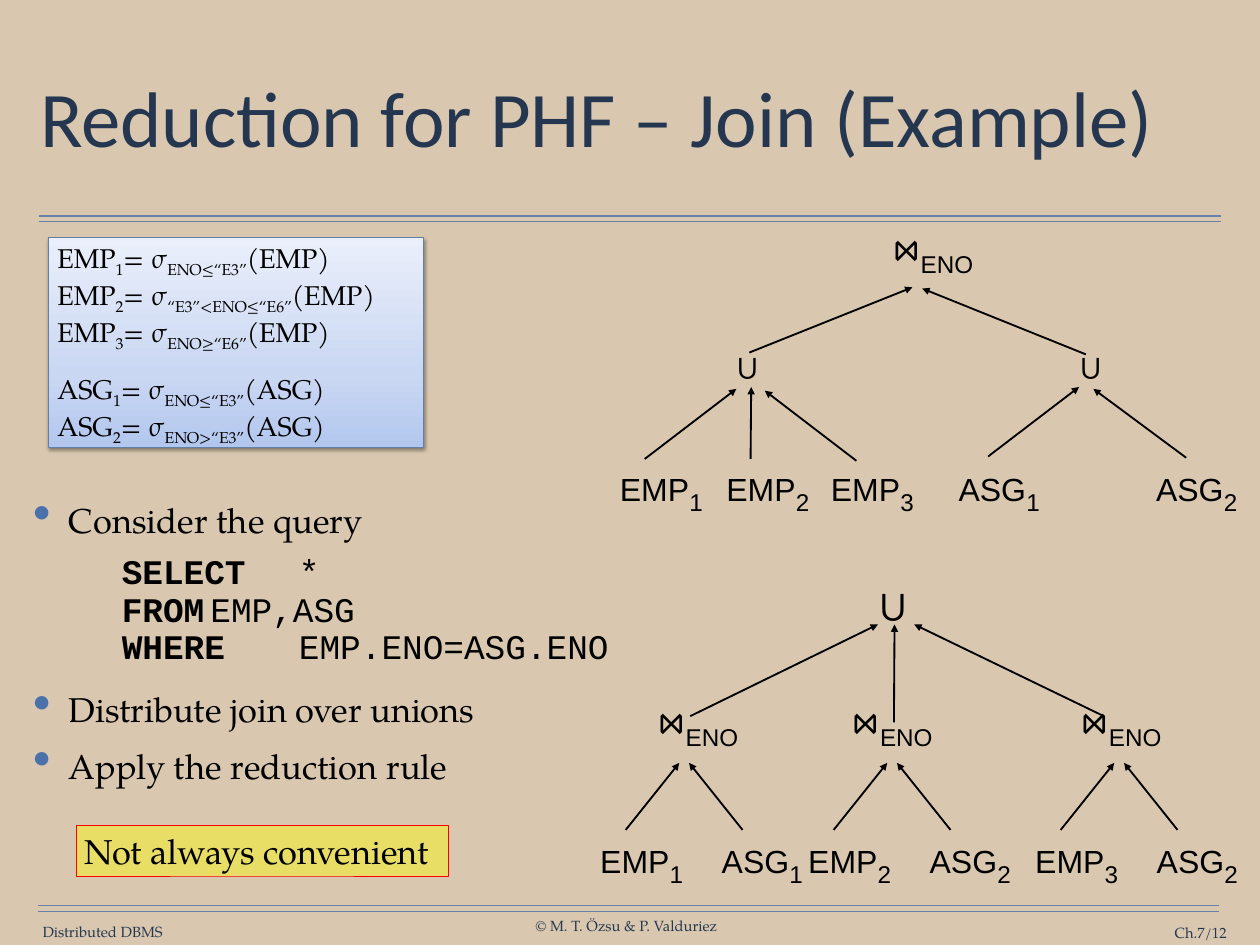
from copy import deepcopy

from lxml.etree import SubElement
from pptx import Presentation
from pptx.dml.color import RGBColor
from pptx.enum.shapes import MSO_CONNECTOR, MSO_SHAPE
from pptx.enum.text import MSO_ANCHOR, MSO_AUTO_SIZE, PP_ALIGN
from pptx.oxml.ns import qn
from pptx.util import Pt

COLORS = {
    "background": "D9C8AF", "rule": "6682AA", "footer": "263750",
    "title": "253750", "text": "000000", "bullet": "4A71A9",
    "box_line": "627FA8", "note": "FFFF00", "note_line": "FF0000",
}
BOX_GRADIENT = [(0, "B3C7EE"), (0.35, "CAD7F2"), (1, "EAEFFB")]
SERIF, SANS, MONO = "TeX Gyre Pagella", "Arial", "Courier New"


def rgb(name):
    return RGBColor.from_string(COLORS[name])


def sub_element(parent, tag, **attrs):
    return SubElement(parent, qn(tag), attrs)


def set_font(font, name, size, color="text"):
    font.name, font.size = name, Pt(size)
    font.color.rgb = rgb(color)


def add_run(p, text, sub=False, bold=None):
    r = p.add_run()
    r.text, r.font.bold = text, bold
    if sub:
        r._r.get_or_add_rPr().set("baseline", "-25000")
    return r


def set_frame(tf, margin=0, wrap=True, anchor=MSO_ANCHOR.TOP):
    tf.margin_left = tf.margin_right = tf.margin_top = tf.margin_bottom = Pt(margin)
    tf.word_wrap, tf.vertical_anchor = wrap, anchor
    tf.auto_size = MSO_AUTO_SIZE.NONE


def add_label(s, center, top, width, height, align=PP_ALIGN.CENTER, anchor=MSO_ANCHOR.TOP):
    box = s.shapes.add_textbox(Pt(center - width / 2), Pt(top), Pt(width), Pt(height))
    set_frame(box.text_frame, wrap=False, anchor=anchor)
    p = box.text_frame.paragraphs[0]
    p.alignment = align
    return p


def add_line(s, start, end, color="text", width=1.5, arrow=True):
    line = s.shapes.add_connector(MSO_CONNECTOR.STRAIGHT, *map(Pt, start + end))
    line.line.color.rgb, line.line.width = rgb(color), Pt(width)
    if arrow:
        sub_element(line.line._get_or_add_ln(), "a:tailEnd", type="triangle")
    sub_element(line._element.spPr, "a:effectLst")


def add_relation(s, name, number, center, top):
    p = add_label(s, center, top, 70, 31.5)
    set_font(p.font, SANS, 26)
    add_run(p, name)
    add_run(p, number, sub=True).font.size = Pt(34)


def add_join(s, center, top):
    p = add_label(s, center, top, 88, 34)
    p.line_spacing = Pt(31.3)
    set_font(add_run(p, "⋈").font, SERIF, 36)
    set_font(add_run(p, "ENO", sub=True).font, SANS, 34)


def add_union(s, center, top, size, spacing):
    p = add_label(s, center, top, 22, spacing)
    p.line_spacing = Pt(spacing)
    set_font(p.font, SANS, size)
    add_run(p, "∪")


def add_box(s, left, top, width, height, line):
    box = s.shapes.add_shape(MSO_SHAPE.RECTANGLE, Pt(left), Pt(top), Pt(width), Pt(height))
    box.line.color.rgb, box.line.width = rgb(line), Pt(0.75)
    box.shadow.inherit = False
    box.text_frame.vertical_anchor = MSO_ANCHOR.TOP
    box.text_frame.paragraphs[0].alignment = PP_ALIGN.LEFT
    return box


def add_frame_lines(s):
    for left, right, top in ((31.5, 992, 175.5), (31, 991, 736)):
        for y in (top, top + 4.5):
            add_line(s, (left, y), (right, y), "rule", 1, arrow=False)
    for text, center, top, width, align in (
            ("Distributed DBMS", 83.5, 749.5, 99.5, PP_ALIGN.CENTER),
            ("© M. T. Özsu & P. Valduriez", 509, 745, 150, PP_ALIGN.CENTER),
            ("Ch.7/12", 941.5, 751, 111, PP_ALIGN.RIGHT)):
        p = add_label(s, center, top, width, 14.5, align, MSO_ANCHOR.MIDDLE)
        set_font(p.font, SERIF, 12, "footer")
        add_run(p, text)


def add_title(s, text):
    title = s.shapes.title
    title.left, title.top, title.width, title.height = map(Pt, (28, 35.5, 968, 126.5))
    set_frame(title.text_frame, 4.5, anchor=MSO_ANCHOR.MIDDLE)
    p = title.text_frame.paragraphs[0]
    p.alignment, p.line_spacing = PP_ALIGN.LEFT, 0.9
    set_font(p.font, "Calibri", 64, "title")
    add_run(p, text)


def add_fragments(s):
    box = add_box(s, 39.5, 193, 305, 170.5, "box_line")
    # Gradient with a middle stop, and a soft shadow below
    box.fill.gradient()
    box.fill.gradient_angle = 90
    first = box.fill.gradient_stops[0]._gs
    first.addnext(deepcopy(first))
    for stop, (position, color) in zip(box.fill.gradient_stops, BOX_GRADIENT):
        stop.position, stop.color.rgb = position, RGBColor.from_string(color)
    effects = box._element.spPr.find(qn("a:effectLst"))
    shadow = sub_element(effects, "a:outerShdw", blurRad=str(Pt(3.1)), dist=str(Pt(1.6)),
                         dir="5400000", rotWithShape="0")
    black = sub_element(shadow, "a:srgbClr", val=COLORS["text"])
    sub_element(black, "a:alpha", val="38000")

    tf = box.text_frame
    for name, conditions in (("EMP", ["ENO≤“E3”", "“E3”<ENO≤“E6”", "ENO≥“E6”"]),
                             ("ASG", ["ENO≤“E3”", "ENO>“E3”"])):
        p = tf.paragraphs[0]
        if name == "ASG":
            p = tf.add_paragraph()
            p.space_before = Pt(16)
        p.alignment = PP_ALIGN.LEFT
        set_font(p.font, SERIF, 22)
        for number, condition in enumerate(conditions, 1):
            if number > 1:
                p.add_line_break()
            add_run(p, name)
            add_run(p, str(number), sub=True)
            add_run(p, "= σ")
            add_run(p, condition, sub=True)
            add_run(p, f"({name})")


def add_bullet(p, text):
    pPr = p._p.get_or_add_pPr()
    pPr.set("marL", str(Pt(29)))
    pPr.set("indent", str(Pt(-29)))
    sub_element(sub_element(pPr, "a:buClr"), "a:srgbClr", val=COLORS["bullet"])
    sub_element(pPr, "a:buSzPct", val="150000")
    sub_element(pPr, "a:buChar", char="•")
    set_font(p.font, SERIF, 28)
    add_run(p, text)


def add_query(p):
    tabs = sub_element(p._p.get_or_add_pPr(), "a:tabLst")
    for position in (72, 144, 216):
        sub_element(tabs, "a:tab", pos=str(Pt(position)), algn="l")
    p.line_spacing, p.space_after = 0.9, Pt(5.7)
    set_font(p.font, MONO, 28)
    for keyword, rest in (("SELECT", "*"), ("FROM", "EMP,ASG"), ("WHERE", "EMP.ENO=ASG.ENO")):
        if keyword != "SELECT":
            p.add_line_break()
        add_run(p, f"\t{keyword}\t", bold=True)
        add_run(p, rest)


def add_steps(s):
    tf = s.shapes.add_textbox(Pt(22.5), Pt(401), Pt(490), Pt(289.5)).text_frame
    set_frame(tf, 4.5)
    add_bullet(tf.paragraphs[0], "Consider the query")
    add_query(tf.add_paragraph())
    for text in ("Distribute join over unions", "Apply the reduction rule"):
        add_bullet(tf.add_paragraph(), text)
    for p in tf.paragraphs[1:]:
        p.space_before = Pt(12)


def add_note(s, text):
    box = add_box(s, 62, 671, 302.5, 41, "note_line")
    box.fill.solid()
    box.fill.fore_color.rgb = rgb("note")
    color = box._element.spPr.find(qn("a:solidFill"))[0]
    sub_element(color, "a:alpha", val="41000")
    p = box.text_frame.paragraphs[0]
    set_font(p.font, SERIF, 28)
    add_run(p, text)


def add_join_of_unions(s):
    for center in (607.5, 886.5):
        add_union(s, center, 280, 28, 34.1)
    for name, number, center in (("EMP", "1", 537.5), ("EMP", "2", 624), ("EMP", "3", 709),
                                 ("ASG", "1", 812), ("ASG", "2", 972.5)):
        add_relation(s, name, number, center, 373.5)
    for start, end in (((610, 373), (610.5, 314.5)), ((524, 373), (598.5, 316)),
                       ((696, 374.5), (621.5, 317.5)), ((803, 371), (877, 314.5)),
                       ((964, 372), (888.5, 316)), ((609, 286.5), (741.5, 233.5)),
                       ((882.5, 288), (749.5, 234.5))):
        add_line(s, start, end)
    add_join(s, 758, 194.5)


def add_union_of_joins(s):
    add_union(s, 726, 471, 36, 41.2)
    for start, end in (((561, 582), (713.5, 507.5)), ((726.5, 587), (727, 507.5)),
                       ((897, 582), (743, 507.5))):
        add_line(s, start, end)
    for center, join, emp, asg in ((556, 567, "1", "1"), (725, 725, "2", "2"),
                                   (909.5, 911, "3", "2")):
        add_join(s, join, 579)
        for name, number, side, offset in (("EMP", emp, -1, -34.5), ("ASG", asg, 1, 63.5)):
            add_relation(s, name, number, center + offset, 675.5)
            add_line(s, (center + side * 47.5, 674.5), (center + side * 4, 620))


def main():
    prs = Presentation()
    prs.slide_width, prs.slide_height = Pt(1024), Pt(768)
    s = prs.slides.add_slide(prs.slide_layouts[5])
    s.background.fill.solid()
    s.background.fill.fore_color.rgb = rgb("background")

    # Frame and title
    add_frame_lines(s)
    add_title(s, "Reduction for PHF – Join (Example)")
    # Left column
    add_steps(s)
    add_fragments(s)
    add_note(s, "Not always convenient")
    # Operator trees
    add_join_of_unions(s)
    add_union_of_joins(s)
    prs.save("out.pptx")


if __name__ == "__main__":
    main()
